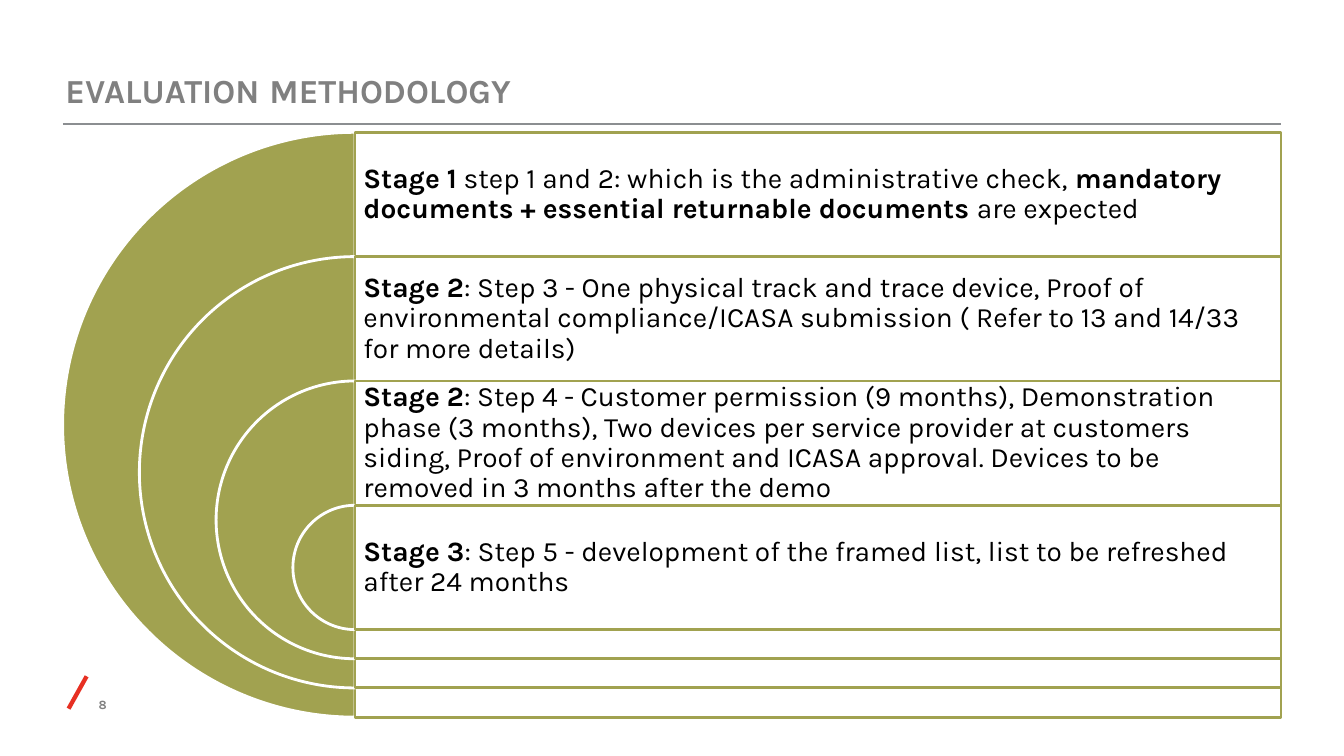
"""Build the evaluation methodology slide with its nested stage diagram."""
from dataclasses import dataclass

from lxml import etree
from pptx import Presentation
from pptx import util as u
from pptx.dml.color import RGBColor
from pptx.enum import shapes, text
from pptx.oxml import ns

FONT = "Karla"
OLIVE, WHITE, GREY, BLACK = "A1A250", "FFFFFF", "808080", "000000"
CENTER_X, RIGHT = 253.6, 915.1
FIRST_TOP, ROW_HEIGHT = 94.5, 88.8
DIAMETER_STEP = 109.65


@dataclass
class Span:
    words: str
    bold: bool = False
    size: float = 20
    color: str = BLACK


@dataclass
class Label:
    left: float
    top: float
    width: float
    height: float
    spans: list[Span]
    anchor: text.MSO_ANCHOR
    inset: float = 0
    bottom_inset: float = 0
    align: text.PP_ALIGN = text.PP_ALIGN.LEFT
    spacing: float = 1.0


@dataclass
class Rule:
    start: tuple[float, float]
    end: tuple[float, float]
    color: str
    width: float


STAGES = [
    [Span("Stage 1", True),
     Span(" step 1 and 2: which is the administrative check, "),
     Span("mandatory documents + essential returnable documents ", True),
     Span("are expected")],
    [Span("Stage 2", True),
     Span(": Step 3 - One physical track and trace device, Proof of environmental "
          "compliance/ICASA submission ( Refer to 13 and 14/33 for more details)")],
    [Span("Stage 2", True),
     Span(": Step 4 - Customer permission (9 months), Demonstration phase (3 months), "
          "Two devices per service provider at customers siding, Proof of environment "
          "and ICASA approval. Devices to be removed in 3 months after the demo")],
    [Span("Stage 3", True),
     Span(": Step 5 - development of the framed list, list to be refreshed "
          "after 24 months")],
]

LABELS = [
    Label(35.3, 495.4, 41, 16.5, [Span("8", True, 9, GREY)],
          text.MSO_ANCHOR.BOTTOM, bottom_inset=3.6, align=text.PP_ALIGN.RIGHT),
    Label(46.8, 28.1, 720, 51.8,
          [Span("EVALUATION", True, 24, GREY), Span(" ", True, 28, GREY),
           Span("METHODOLOGY", True, 24, GREY)], text.MSO_ANCHOR.BOTTOM),
]

RULES = [
    Rule((44.9, 88.6), (RIGHT, 88.6), "8B8E91", 1.65),
    Rule((49, 506.2), (61.9, 483.1), "E73023", 3.05),
]


def rgb(color: str) -> RGBColor:
    return RGBColor.from_string(color)


def apply_format(target: object, values: dict[str, object]) -> None:
    for name, value in values.items():
        setattr(target, name, value)


def draw_label(page, label: Label) -> None:
    box = page.shapes.add_textbox(u.Pt(label.left), u.Pt(label.top),
                                  u.Pt(label.width), u.Pt(label.height))
    inset = u.Pt(label.inset)
    apply_format(box.text_frame, {
        "word_wrap": True, "vertical_anchor": label.anchor,
        "margin_left": inset, "margin_right": inset, "margin_top": inset,
        "margin_bottom": u.Pt(label.bottom_inset or label.inset)})
    para = box.text_frame.paragraphs[0]
    apply_format(para, {"alignment": label.align, "line_spacing": label.spacing})
    for item in label.spans:
        span = para.add_run()
        span.text = item.words
        apply_format(span.font, {"name": FONT, "size": u.Pt(item.size),
                                 "bold": item.bold})
        span.font.color.rgb = rgb(item.color)


def draw_rule(page, rule: Rule) -> None:
    line = page.shapes.add_connector(
        shapes.MSO_CONNECTOR.STRAIGHT,
        *(u.Pt(value) for value in rule.start + rule.end))
    line.line.color.rgb = rgb(rule.color)
    line.line.width = u.Pt(rule.width)
    etree.SubElement(line._element.spPr, ns.qn("a:effectLst"))


def draw_shape(page, kind: shapes.MSO_SHAPE, left: float, top: float,
               width: float, height: float, fill: str, outline: str):
    shape = page.shapes.add_shape(kind, u.Pt(left), u.Pt(top),
                                  u.Pt(width), u.Pt(height))
    shape.shadow.inherit = False
    shape.fill.solid()
    shape.fill.fore_color.rgb = rgb(fill)
    shape.line.color.rgb = rgb(outline)
    shape.line.width = u.Pt(2)
    return shape


def draw_stage(page, index: int, spans: list[Span]) -> None:
    top = FIRST_TOP + index * ROW_HEIGHT
    diameter = ROW_HEIGHT + (len(STAGES) - 1 - index) * DIAMETER_STEP
    width = RIGHT - CENTER_X
    pie = draw_shape(page, shapes.MSO_SHAPE.PIE, CENTER_X - diameter / 2, top,
                     diameter, diameter, OLIVE, WHITE)
    pie.adjustments[0], pie.adjustments[1] = 54, 162
    panel = draw_shape(page, shapes.MSO_SHAPE.RECTANGLE, CENTER_X, top,
                       width, diameter, WHITE, OLIVE)
    fill_color = panel._element.spPr.find(ns.qn("a:solidFill"))[0]
    etree.SubElement(fill_color, ns.qn("a:alpha"), val="90000")
    draw_label(page, Label(CENTER_X, top, width, ROW_HEIGHT, spans,
                           text.MSO_ANCHOR.MIDDLE, inset=6, spacing=0.9))


def main() -> None:
    deck = Presentation()
    apply_format(deck, {"slide_width": u.Pt(960), "slide_height": u.Pt(540)})
    page = deck.slides.add_slide(deck.slide_layouts[6])
    for rule in RULES:
        draw_rule(page, rule)
    for label in LABELS:
        draw_label(page, label)
    for index, spans in enumerate(STAGES):
        draw_stage(page, index, spans)
    deck.save("out.pptx")


if __name__ == "__main__":
    main()
